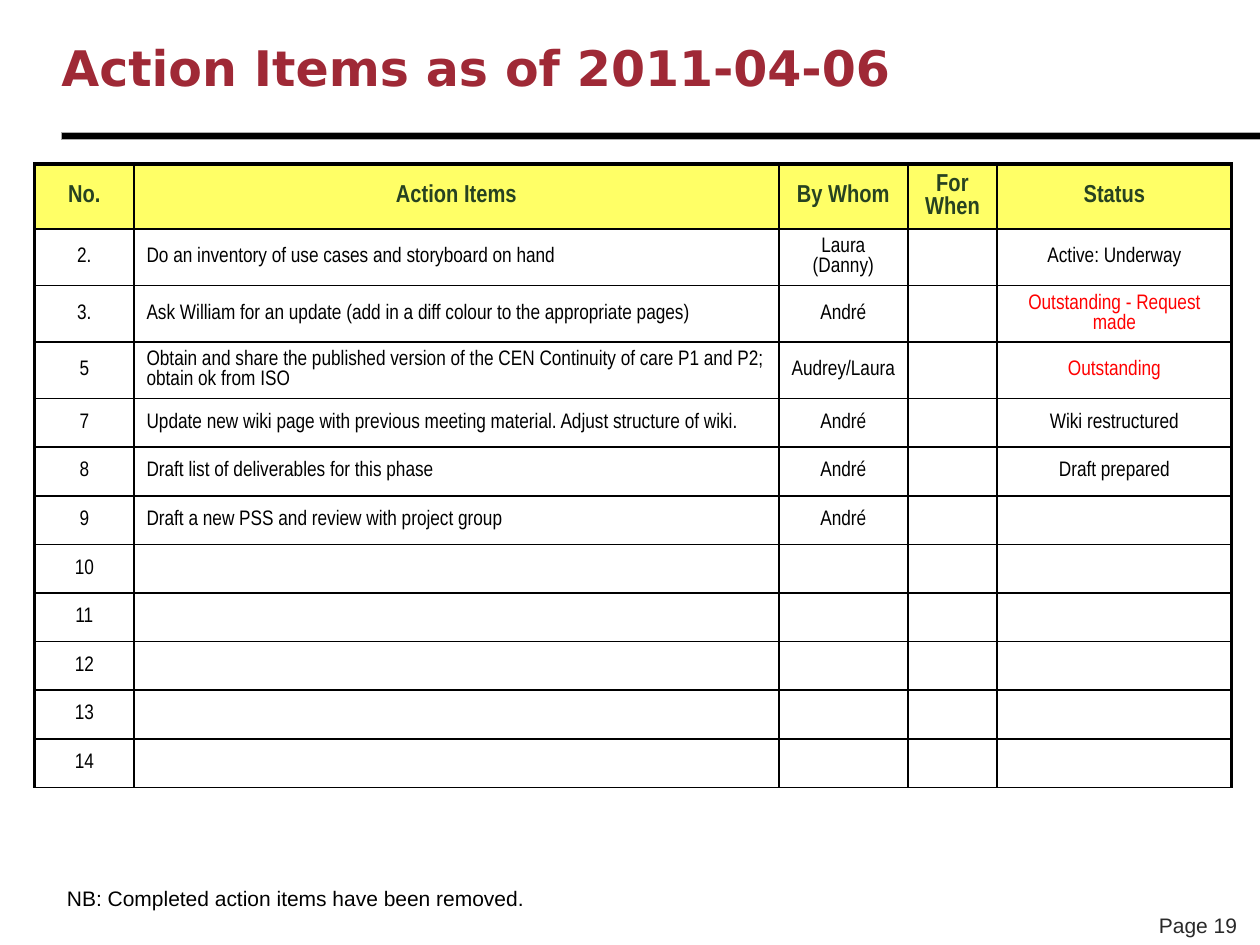
from lxml import etree
from pptx import Presentation
from pptx.dml.color import RGBColor
from pptx.enum.shapes import MSO_SHAPE
from pptx.enum.text import MSO_ANCHOR, PP_ALIGN
from pptx.oxml.ns import qn
from pptx.util import Cm, Pt

RECT = MSO_SHAPE.RECTANGLE
MIDDLE, BOTTOM = MSO_ANCHOR.MIDDLE, MSO_ANCHOR.BOTTOM
LEFT, CENTER, RIGHT = PP_ALIGN.LEFT, PP_ALIGN.CENTER, PP_ALIGN.RIGHT

COLORS = {
    "title": "9F2936",
    "bar": "000000",
    "bar_edge": "ADADAD",
    "header_fill": "FFFF66",
    "header_text": "274221",
    "text": "000000",
    "alert": "FF0000",
    "border": "000000",
    "page": "292929",
}

COL_WIDTHS = [2.0, 13.0, 2.6, 1.8, 4.73]
ROW_HEIGHTS = [1.3] + [1.14] * 3 + [0.98] * 8
HEADER = ["No.", "Action Items", "By Whom", "For When", "Status"]
ACTIONS = [
    ["2.", "Do an inventory of use cases and storyboard on hand",
     "Laura (Danny)", "", "Active: Underway"],
    ["3.", "Ask William for an update (add in a diff colour to the appropriate pages)",
     "André", "", "Outstanding - Request made"],
    ["5", "Obtain and share the published version of the CEN Continuity of care "
     "P1 and P2; obtain ok from ISO", "Audrey/Laura", "", "Outstanding"],
    ["7", "Update new wiki page with previous meeting material. "
     "Adjust structure of wiki.", "André", "", "Wiki restructured"],
    ["8", "Draft list of deliverables for this phase", "André", "", "Draft prepared"],
    ["9", "Draft a new PSS and review with project group", "André", "", ""],
] + [[str(n), "", "", "", ""] for n in range(10, 15)]


def rgb(name):
    """Return the named colour."""
    return RGBColor.from_string(COLORS[name])


def style_paragraph(p, font, size, color, bold=False, align=LEFT):
    """Set the alignment and font of a paragraph."""
    p.alignment = align
    p.font.name = font
    p.font.size = Pt(size)
    p.font.bold = bold
    p.font.color.rgb = rgb(color)


def add_text(slide, box, text, font, size, color, bold=False, align=LEFT,
             anchor=MSO_ANCHOR.TOP, wrap=True, margin=None):
    """Add a one-paragraph text box in the given box."""
    tf = slide.shapes.add_textbox(*map(Cm, box)).text_frame
    tf.word_wrap = wrap
    tf.vertical_anchor = anchor
    if margin is not None:
        tf.margin_left = tf.margin_right = Cm(margin)
        tf.margin_top = tf.margin_bottom = Cm(margin)
    p = tf.paragraphs[0]
    p.text = text
    style_paragraph(p, font, size, color, bold, align)


def add_heading(slide, left, top, width):
    """Add the title with the bar below it."""
    add_text(slide, (left, top, 21.59, 2.08), "Action Items as of 2011-04-06",
             "DejaVu Sans", 28, "title", bold=True, anchor=MIDDLE, margin=0)
    sp = slide.shapes.add_shape(RECT, Cm(left), Cm(top + 2.36), Cm(width), Cm(0.15))
    sp.shadow.inherit = False
    sp.fill.solid()
    sp.fill.fore_color.rgb = rgb("bar")
    sp.line.color.rgb = rgb("bar_edge")
    sp.line.width = Pt(0.75)


def set_borders(cell, widths):
    """Draw the cell borders from a dict of side to width in points."""
    tcPr = cell._tc.get_or_add_tcPr()
    for i, side in enumerate("LRTB"):
        ln = etree.Element(qn(f"a:ln{side}"), w=str(Pt(widths[side])))
        fill = etree.SubElement(ln, qn("a:solidFill"))
        etree.SubElement(fill, qn("a:srgbClr"), val=COLORS["border"])
        tcPr.insert(i, ln)


def fill_cell(cell, text, row, col):
    """Write and style one table cell according to its place."""
    is_header = row == 0
    size = 14 if is_header else 12
    color = "header_text" if is_header else "text"
    if text.startswith("Outstanding"):
        color = "alert"
    cell.vertical_anchor = MIDDLE
    cell.margin_top = cell.margin_bottom = Cm(0.06)
    p = cell.text_frame.paragraphs[0]
    p.text = text
    p.space_before = Pt(size * 0.2)
    align = LEFT if col == 1 and not is_header else CENTER
    style_paragraph(p, "Arial Narrow", size, color, is_header, align)
    if is_header:
        cell.fill.solid()
        cell.fill.fore_color.rgb = rgb("header_fill")
    else:
        cell.fill.background()
    set_borders(cell, {
        "L": 2.25 if col == 0 else 1,
        "R": 2.25 if col == len(HEADER) - 1 else 1,
        "T": 2.25 if is_header else 1,
        "B": 1,
    })


def add_action_table(slide, left, top):
    """Add the table of action items."""
    rows = [HEADER] + ACTIONS
    table = slide.shapes.add_table(
        len(rows), len(HEADER), Cm(left), Cm(top),
        Cm(sum(COL_WIDTHS)), Cm(sum(ROW_HEIGHTS))).table
    for column, width in zip(table.columns, COL_WIDTHS):
        column.width = Cm(width)
    for table_row, height in zip(table.rows, ROW_HEIGHTS):
        table_row.height = Cm(height)
    for i, row in enumerate(rows):
        for j, text in enumerate(row):
            fill_cell(table.cell(i, j), text, i, j)


def add_footer(slide, left, top):
    """Add the note and the page number."""
    add_text(slide, (left, top, 9.8, 0.76),
             "NB: Completed action items have been removed.",
             "Arial", 12, "text", wrap=False)
    add_text(slide, (left + 21.32, top + 0.53, 2.77, 0.76), "Page 19",
             "Arial", 12, "page", align=RIGHT, anchor=BOTTOM, wrap=False)


def main():
    """Build and save the slide."""
    prs = Presentation()
    prs.slide_width, prs.slide_height = Cm(25.4), Cm(19.05)
    slide = prs.slides.add_slide(prs.slide_layouts[6])
    add_heading(slide, 1.24, 0.31, 24.18)
    add_action_table(slide, 0.7, 3.31)
    add_footer(slide, 1.1, 17.73)
    prs.save("out.pptx")


if __name__ == "__main__":
    main()
